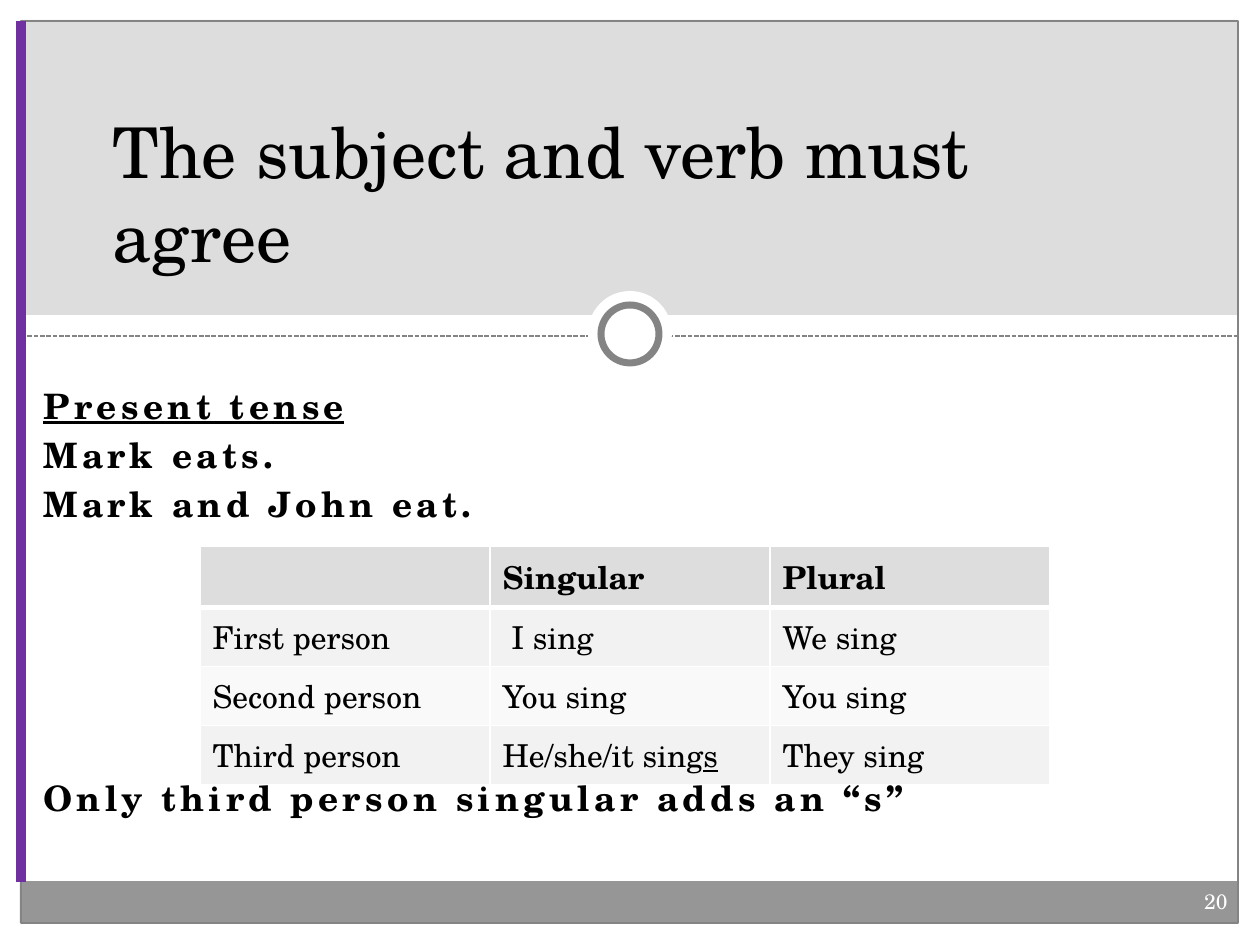
from lxml import etree
from pptx import Presentation
from pptx.dml.color import RGBColor
from pptx.enum.dml import MSO_LINE
from pptx.enum.shapes import MSO_CONNECTOR, MSO_SHAPE
from pptx.enum.text import MSO_ANCHOR, MSO_AUTO_SIZE, PP_ALIGN
from pptx.oxml.ns import qn
from pptx.util import Emu, Pt

PX_PER_INCH = 126
SLIDE_W, SLIDE_H = 1260, 945
FONT = "TeX Gyre Schola"
TITLE_ONLY = 5
RECT, OVAL = MSO_SHAPE.RECTANGLE, MSO_SHAPE.OVAL
STRAIGHT = MSO_CONNECTOR.STRAIGHT
DASH = MSO_LINE.SQUARE_DOT
BOTTOM, MIDDLE = MSO_ANCHOR.BOTTOM, MSO_ANCHOR.MIDDLE
LEFT, RIGHT = PP_ALIGN.LEFT, PP_ALIGN.RIGHT
NO_AUTOFIT = MSO_AUTO_SIZE.NONE

COLORS = {
    "white": "FFFFFF",
    "black": "000000",
    "header": "DDDDDD",
    "footer": "969696",
    "outline": "848484",
    "accent": "7030A0",
    "odd_row": "F2F2F2",
    "even_row": "F9F9F9",
}

CONJUGATION = [
    ["", "Singular", "Plural"],
    ["First person", " I sing", "We sing"],
    ["Second person", "You sing", "You sing"],
    ["Third person", "He/she/it sing", "They sing"],
]
COLUMN_WIDTHS = [290, 280, 280]
ROW_HEIGHT = 59


def px(length):
    return Emu(round(length * 914400 / PX_PER_INCH))


def rgb(name):
    return RGBColor.from_string(COLORS[name])


def style_run(run, size, color="black", bold=False, underline=False, spacing=None):
    font = run.font
    font.name, font.size = FONT, Pt(size)
    font.bold, font.underline = bold, underline
    font.color.rgb = rgb(color)
    if spacing:
        run._r.get_or_add_rPr().set("spc", str(round(spacing * 100)))


def add_panel(slide, box, fill=None, line=None, weight=0.75, kind=RECT):
    panel = slide.shapes.add_shape(kind, *map(px, box))
    panel.shadow.inherit = False
    if fill:
        panel.fill.solid()
        panel.fill.fore_color.rgb = rgb(fill)
    else:
        panel.fill.background()
    if line:
        panel.line.color.rgb = rgb(line)
        panel.line.width = Pt(weight)
    else:
        panel.line.fill.background()


def add_rule(slide, start, end, color, weight, dash=None):
    rule = slide.shapes.add_connector(STRAIGHT, *map(px, start + end))
    rule.line.color.rgb = rgb(color)
    rule.line.width = Pt(weight)
    if dash:
        rule.line.dash_style = dash
    etree.SubElement(rule._element.spPr, qn("a:effectLst"))


def add_text_box(slide, box):
    frame = slide.shapes.add_textbox(*map(px, box)).text_frame
    frame.word_wrap = True
    return frame


def add_frame(slide):
    add_panel(slide, (21, 20, 1217, 295), "header")
    add_panel(slide, (20, 881, 1217, 42), "footer")
    add_panel(slide, (21, 21, 1217, 902), line="outline")
    add_rule(slide, (21, 336), (1238, 336), "outline", 0.9, DASH)
    add_panel(slide, (588, 291, 84, 84), "white", kind=OVAL)
    add_panel(slide, (601, 305, 58, 58), "white", "outline", 4, OVAL)


def add_title(slide, text):
    title = slide.shapes.title
    title.left, title.top, title.width, title.height = map(px, (100, 73, 1071, 210))
    # Bring the title in front of the header panel
    title.element.getparent().append(title.element)
    frame = title.text_frame
    frame.text = text
    frame.word_wrap = True
    frame.auto_size = NO_AUTOFIT
    frame.vertical_anchor = BOTTOM
    frame.paragraphs[0].alignment = LEFT
    style_run(frame.paragraphs[0].runs[0], 40)


def add_examples(slide):
    frame = add_text_box(slide, (31, 378, 1197, 494))
    examples = ["Present tense", "Mark eats.", "Mark and John eat.",
                "Only third person singular adds an “s”"]
    frame.text = "\n".join(examples)
    for index, paragraph in enumerate(frame.paragraphs):
        paragraph.space_before = Pt(4)
        style_run(paragraph.runs[0], 20, bold=True, underline=index == 0, spacing=2.5)
    # The rule below the table leaves room for it
    frame.paragraphs[-1].space_before = Pt(144)


def set_borders(cell, top, bottom):
    properties = cell._tc.get_or_add_tcPr()
    for side, weight in (("L", 1), ("R", 1), ("T", top), ("B", bottom)):
        border = etree.SubElement(properties, qn(f"a:ln{side}"), w=str(Pt(weight)))
        fill = etree.SubElement(border, qn("a:solidFill"))
        etree.SubElement(fill, qn("a:srgbClr"), val=COLORS["white"])


def add_conjugation_table(slide):
    rows, columns = len(CONJUGATION), len(COLUMN_WIDTHS)
    box = (200, 546, sum(COLUMN_WIDTHS), rows * ROW_HEIGHT)
    table = slide.shapes.add_table(rows, columns, *map(px, box)).table
    table.horz_banding = False
    for column, width in zip(table.columns, COLUMN_WIDTHS):
        column.width = px(width)
    for r, words in enumerate(CONJUGATION):
        table.rows[r].height = px(ROW_HEIGHT)
        row_fill = "header" if r == 0 else "odd_row" if r % 2 else "even_row"
        for c, word in enumerate(words):
            cell = table.cell(r, c)
            set_borders(cell, top=3 if r == 1 else 1, bottom=3 if r == 0 else 1)
            cell.fill.solid()
            cell.fill.fore_color.rgb = rgb(row_fill)
            cell.vertical_anchor = MIDDLE
            cell.text_frame.text = word
            for run in cell.text_frame.paragraphs[0].runs:
                style_run(run, 18, bold=r == 0)
    ending = table.cell(3, 1).text_frame.paragraphs[0].add_run()
    ending.text = "s"
    style_run(ending, 18, underline=True)


def add_page_number(slide, number):
    frame = add_text_box(slide, (746, 882, 494, 50))
    frame.text = number
    frame.paragraphs[0].alignment = RIGHT
    style_run(frame.paragraphs[0].runs[0], 12, "white")


def main():
    presentation = Presentation()
    presentation.slide_width, presentation.slide_height = px(SLIDE_W), px(SLIDE_H)
    slide = presentation.slides.add_slide(presentation.slide_layouts[TITLE_ONLY])
    add_frame(slide)
    add_examples(slide)
    add_page_number(slide, "20")
    add_title(slide, "The subject and verb must agree")
    add_rule(slide, (21, 21), (21, 882), "accent", 6)
    add_conjugation_table(slide)
    presentation.save("out.pptx")


if __name__ == "__main__":
    main()
